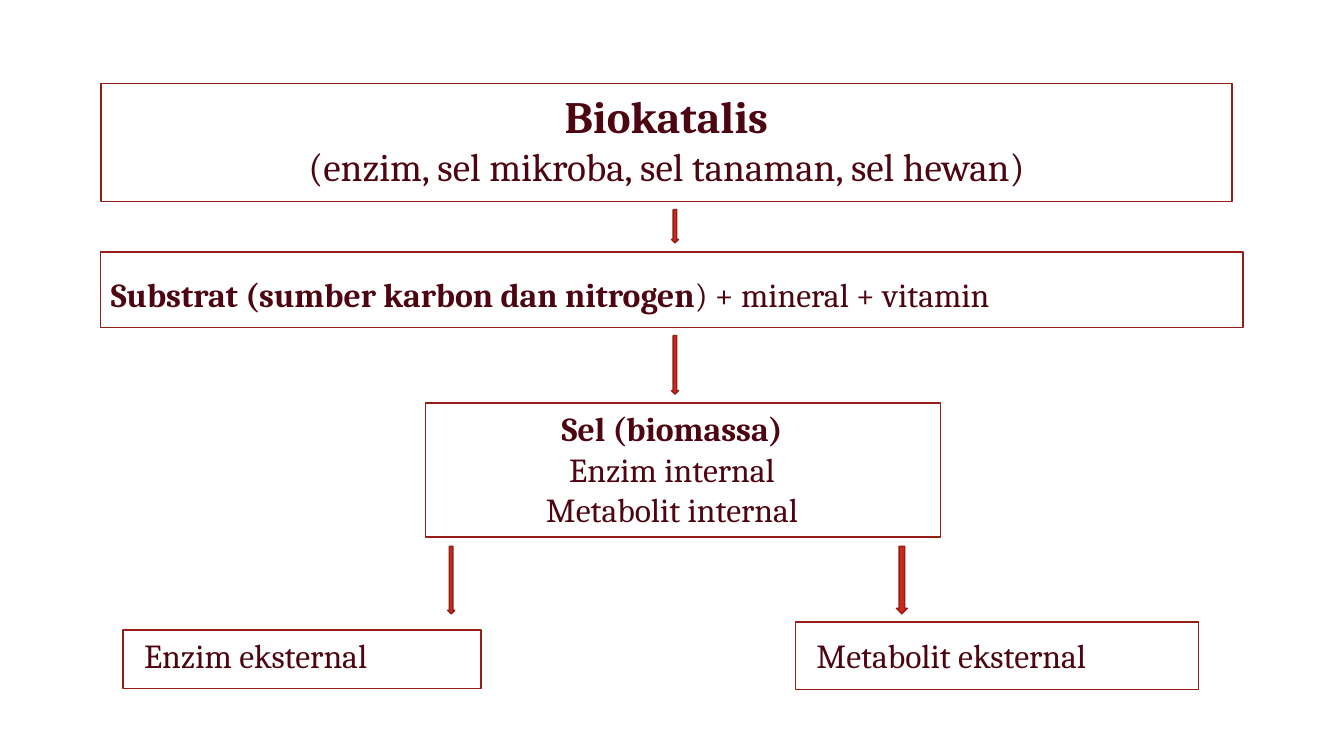
import pptx
import pptx.util
import pptx.dml.color
import pptx.enum.shapes
import pptx.enum.text

Inches = pptx.util.Inches
Pt = pptx.util.Pt
SHAPE = pptx.enum.shapes.MSO_SHAPE
ALIGN = pptx.enum.text.PP_ALIGN

FONT = "Cambria"
TEXT = "4D0511"
LINE = "951F16"
ARROW = "CA2A1E"


def rgb(color):
    return pptx.dml.color.RGBColor.from_string(color)


def add_outlined(slide, preset, box, fill=None):
    sp = slide.shapes.add_shape(preset, *map(Inches, box))
    sp.shadow.inherit = False
    if fill:
        sp.fill.solid()
        sp.fill.fore_color.rgb = rgb(fill)
    else:
        sp.fill.background()
    sp.line.color.rgb = rgb(LINE)
    sp.line.width = Pt(1)


def add_text(slide, box, paragraphs, align=ALIGN.LEFT):
    """Each paragraph is a list of (text, size, bold) runs."""
    tf = slide.shapes.add_textbox(*map(Inches, box)).text_frame
    tf.word_wrap = True
    tf.auto_size = pptx.enum.text.MSO_AUTO_SIZE.SHAPE_TO_FIT_TEXT
    for i, runs in enumerate(paragraphs):
        p = tf.add_paragraph() if i else tf.paragraphs[0]
        p.alignment = align
        for text, size, bold in runs:
            r = p.add_run()
            r.text = text
            r.font.name = FONT
            r.font.size = Pt(size)
            r.font.bold = bold
            r.font.color.rgb = rgb(TEXT)


def main():
    prs = pptx.Presentation()
    prs.slide_width = Inches(13.33)
    prs.slide_height = Inches(7.5)
    slide = prs.slides.add_slide(prs.slide_layouts[6])

    frames = [
        (1, 0.83, 11.22, 1.17),
        (1, 2.5, 11.33, 0.75),
        (4.22, 4, 5.11, 1.33),
        (1.22, 6.25, 3.55, 0.58),
        (7.89, 6.17, 4, 0.67),
    ]
    for frame in frames:
        add_outlined(slide, SHAPE.RECTANGLE, frame)

    add_text(slide, (1.11, 0.83, 11, 1.11), [
        [("Biokatalis", 32, True)],
        [("(enzim, sel mikroba, sel tanaman, sel hewan)", 28, False)],
    ], ALIGN.CENTER)
    add_text(slide, (1, 2.67, 11.11, 0.5), [
        [("Substrat (sumber karbon dan nitrogen", 24, True),
         (") + mineral + vitamin", 24, False)],
    ])
    add_text(slide, (3.89, 4, 5.55, 1.31), [
        [("Sel (biomassa)", 24, True)],
        [("Enzim internal", 24, False)],
        [("Metabolit internal", 24, False)],
    ], ALIGN.CENTER)
    add_text(slide, (1.33, 6.25, 4.78, 0.5), [[("Enzim eksternal", 24, False)]])
    add_text(slide, (8, 6.25, 4, 0.5), [[("Metabolit eksternal", 24, False)]])

    arrows = [
        (6.66, 2.08, 0.07, 0.33),
        (6.66, 3.33, 0.07, 0.58),
        (4.44, 5.42, 0.07, 0.67),
        (8.89, 5.42, 0.11, 0.67),
    ]
    for arrow in arrows:
        add_outlined(slide, SHAPE.DOWN_ARROW, arrow, ARROW)

    prs.save("out.pptx")


if __name__ == "__main__":
    main()
